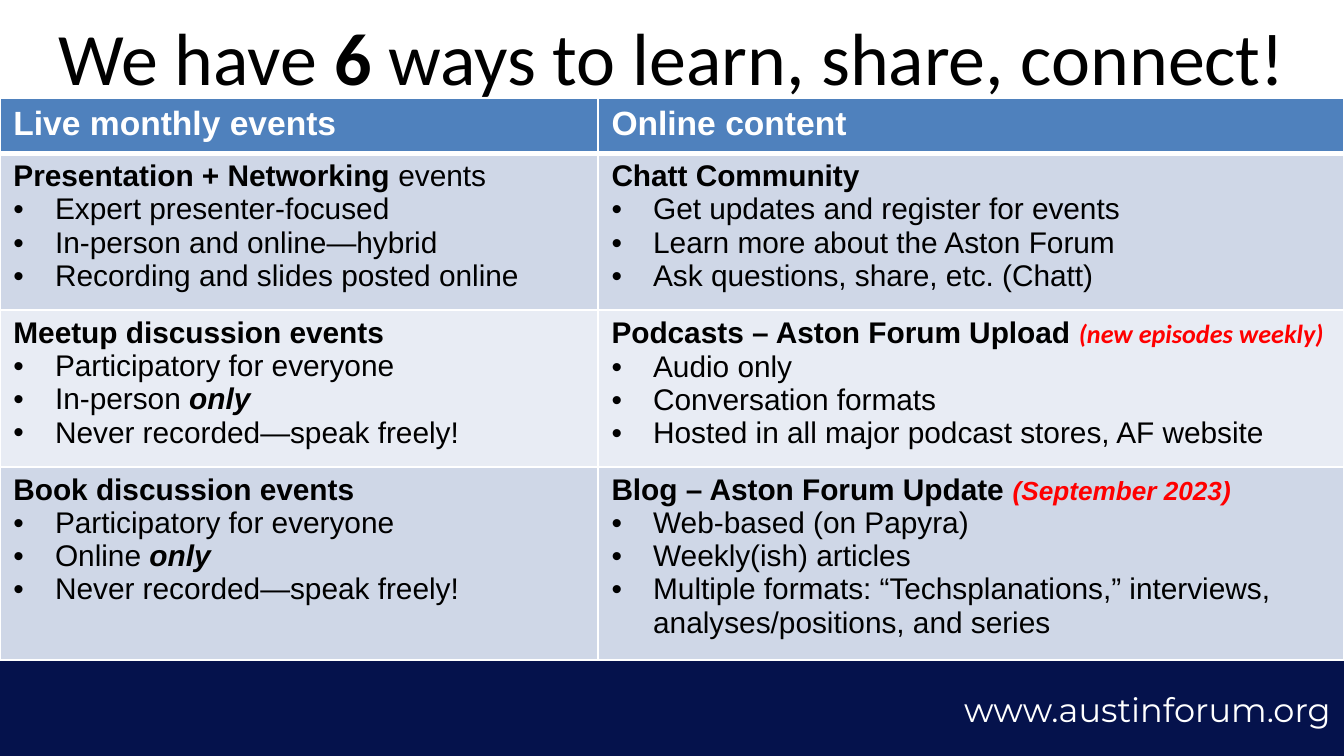
import pptx
import pptx.dml.color
import pptx.enum.shapes
import pptx.enum.text
import pptx.oxml
import pptx.oxml.ns
import pptx.util

TITLE = [("We have ", "title"), ("6", "title_bold"), (" ways to learn, share, connect!", "title")]
WEBSITE = [("www.austinforum.org", "footer")]
HEADERS = ["Live monthly events", "Online content"]
TOPICS = [
    [
        {"head": [("Presentation + Networking ", "head"), ("events", "body")],
         "points": ["Expert presenter-focused", "In-person and online—hybrid",
                    "Recording and slides posted online"]},
        {"head": [("Chatt Community", "head")],
         "points": ["Get updates and register for events", "Learn more about the Aston Forum",
                    "Ask questions, share, etc. (Chatt)"]},
    ],
    [
        {"head": [("Meetup discussion events", "head")],
         "points": ["Participatory for everyone", [("In-person ", "body"), ("only", "stress")],
                    "Never recorded—speak freely!"]},
        {"head": [("Podcasts – Aston Forum Upload ", "head"), ("(new episodes weekly)", "news_calibri")],
         "points": ["Audio only", "Conversation formats",
                    "Hosted in all major podcast stores, AF website"]},
    ],
    [
        {"head": [("Book discussion events", "head")],
         "points": ["Participatory for everyone", [("Online ", "body"), ("only", "stress")],
                    "Never recorded—speak freely!"]},
        {"head": [("Blog – Aston Forum Update ", "head"), ("(September 2023)", "news")],
         "points": ["Web-based (on Papyra)", "Weekly(ish) articles",
                    "Multiple formats: “Techsplanations,” interviews, analyses/positions, and series"]},
    ],
]

THEME = {
    "colors": {"navy": "05124C", "blue": "4F81BD", "bands": ["CFD7E7", "E8ECF4"], "rule": "FFFFFF"},
    "styles": {
        "title": {"size": 39.6, "font": "Calibri"},
        "title_bold": {"size": 39.6, "font": "Calibri", "bold": True},
        "footer": {"size": 18, "font": "Montserrat", "color": "FFFFFF"},
        "header": {"size": 18, "color": "FFFFFF", "bold": True},
        "head": {"bold": True},
        "body": {},
        "stress": {"bold": True, "italic": True},
        "news": {"size": 14, "color": "FF0000", "bold": True, "italic": True},
        "news_calibri": {"size": 14, "font": "Calibri", "color": "FF0000", "bold": True, "italic": True},
    },
}
COLORS = THEME["colors"]
WIDTH = 10
HEIGHT = WIDTH * 9 / 16
TITLE_HEIGHT, TABLE_TOP, TABLE_HEIGHT, FOOTER_TOP = 0.83, 0.73, 4.17, 4.92
COLUMN_SHARES = [0.445, 0.555]
ROW_HEIGHTS = [0.41, 0.41, 0.22, 0.41]
INDENT = 0.31
ALIGN = pptx.enum.text.PP_ALIGN


def rgb(code):
    return pptx.dml.color.RGBColor.from_string(code)


def inches(*values):
    return [pptx.util.Inches(value) for value in values]


def add_span(para, text, size=16, font="Arial", color="000000", bold=False, italic=False):
    span = para.add_run()
    span.text = text
    span.font.size = pptx.util.Pt(size)
    span.font.name = font
    span.font.color.rgb = rgb(color)
    span.font.bold = bold
    span.font.italic = italic


def fill_para(para, spans, align=ALIGN.LEFT, bullet=False):
    if bullet:
        props = para._p.get_or_add_pPr()
        props.set("marL", str(pptx.util.Inches(INDENT)))
        props.set("indent", str(-pptx.util.Inches(INDENT)))
        space = pptx.oxml.ns.nsdecls("a")
        props.append(pptx.oxml.parse_xml(f'<a:buFont {space} typeface="Arial"/>'))
        props.append(pptx.oxml.parse_xml(f'<a:buChar {space} char="•"/>'))
    para.alignment = align
    for text, style in spans:
        add_span(para, text, **THEME["styles"][style])


def paint(cell, color, bottom=1):
    cell.fill.solid()
    cell.fill.fore_color.rgb = rgb(color)
    props = cell._tc.get_or_add_tcPr()
    for place, (side, points) in enumerate(zip("LRTB", [1, 1, 1, bottom])):
        props.insert(place, pptx.oxml.parse_xml(
            f'<a:ln{side} {pptx.oxml.ns.nsdecls("a")} w="{pptx.util.Pt(points)}"><a:solidFill>'
            f'<a:srgbClr val="{COLORS["rule"]}"/></a:solidFill></a:ln{side}>'))


def add_footer(page):
    box = page.shapes.add_shape(pptx.enum.shapes.MSO_SHAPE.RECTANGLE,
                                *inches(0, FOOTER_TOP, WIDTH, HEIGHT - FOOTER_TOP))
    box.shadow.inherit = False
    box.fill.solid()
    box.fill.fore_color.rgb = rgb(COLORS["navy"])
    box.line.color.rgb = rgb(COLORS["navy"])
    box.line.width = pptx.util.Pt(0.75)
    box.text_frame.vertical_anchor = pptx.enum.text.MSO_ANCHOR.MIDDLE
    fill_para(box.text_frame.paragraphs[0], WEBSITE, align=ALIGN.RIGHT)


def add_title(page):
    box = page.shapes.add_textbox(*inches(0, 0, WIDTH, TITLE_HEIGHT))
    box.text_frame.word_wrap = True
    box.text_frame.vertical_anchor = pptx.enum.text.MSO_ANCHOR.MIDDLE
    fill_para(box.text_frame.paragraphs[0], TITLE, align=ALIGN.CENTER)


def add_topics(page):
    frame = page.shapes.add_table(len(ROW_HEIGHTS), len(COLUMN_SHARES),
                                  *inches(0, TABLE_TOP, WIDTH, TABLE_HEIGHT))
    table = frame.table
    for column, share in zip(table.columns, COLUMN_SHARES):
        column.width = pptx.util.Inches(WIDTH * share)
    for row, height in zip(table.rows, ROW_HEIGHTS):
        row.height = pptx.util.Inches(height)
    frame.height = pptx.util.Inches(TABLE_HEIGHT)
    for column, header in enumerate(HEADERS):
        cell = table.cell(0, column)
        paint(cell, COLORS["blue"], bottom=3)
        fill_para(cell.text_frame.paragraphs[0], [(header, "header")])
    for row, topics in enumerate(TOPICS):
        for column, topic in enumerate(topics):
            cell = table.cell(row + 1, column)
            paint(cell, COLORS["bands"][row % 2])
            fill_para(cell.text_frame.paragraphs[0], topic["head"])
            for point in topic["points"]:
                spans = [(point, "body")] if isinstance(point, str) else point
                fill_para(cell.text_frame.add_paragraph(), spans, bullet=True)


def main():
    deck = pptx.Presentation()
    deck.slide_width, deck.slide_height = inches(WIDTH, HEIGHT)
    page = deck.slides.add_slide(deck.slide_layouts[6])
    add_footer(page)
    add_title(page)
    add_topics(page)
    deck.save("out.pptx")


if __name__ == "__main__":
    main()
